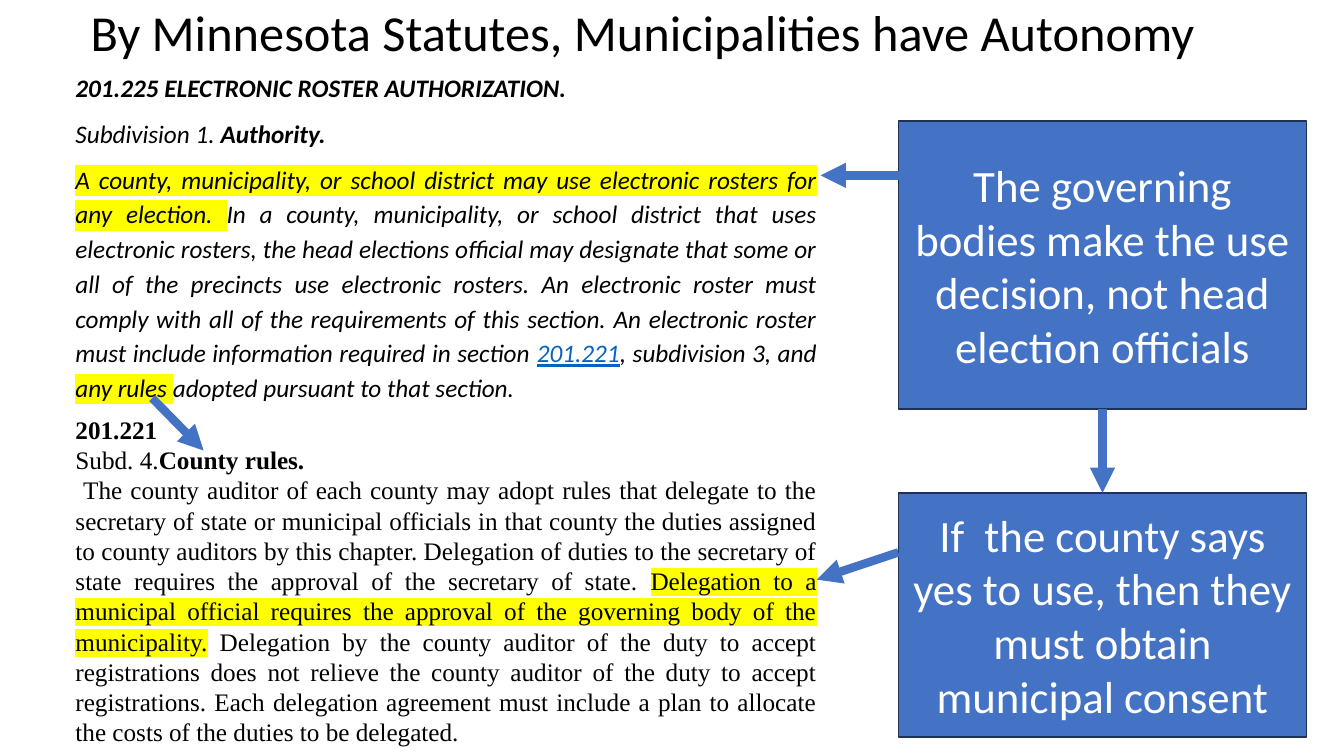
import pptx
import pptx.util
import pptx.dml.color
import pptx.enum.shapes
import pptx.enum.text
import pptx.oxml
import pptx.oxml.ns
import lxml.etree

Inches = pptx.util.Inches
Pt = pptx.util.Pt
Align = pptx.enum.text.PP_ALIGN
qn = pptx.oxml.ns.qn


def color(code):
    return pptx.dml.color.RGBColor.from_string(code)


def add_text(frame, paras, face, size, ink, align):
    frame.word_wrap = True
    for num, parts in enumerate(paras):
        para = frame.paragraphs[0] if num == 0 else frame.add_paragraph()
        para.alignment = align
        for words, marks in parts:
            run = para.add_run()
            run.text = words
            font = run.font
            font.name = face
            font.size = Pt(size)
            font.bold = "b" in marks
            font.italic = "i" in marks
            font.underline = "u" in marks
            font.color.rgb = color("0563C1" if "u" in marks else ink)
            if "h" in marks:
                glow = lxml.etree.Element(qn("a:highlight"))
                lxml.etree.SubElement(glow, qn("a:srgbClr")).set("val", "FFFF00")
                run._r.rPr.find(qn("a:solidFill")).addnext(glow)


deck = pptx.Presentation()
deck.slide_width = Inches(13.33)
deck.slide_height = Inches(7.5)
slide = deck.slides.add_slide(deck.slide_layouts[6])
shapes = slide.shapes

roster = [
    [("201.225 ELECTRONIC ROSTER AUTHORIZATION.", "bi")],
    [("Subdivision 1. ", "i"), ("Authority.", "bi")],
    [
        ("A county, municipality, or school district may use electronic rosters "
         "for any election. ", "ih"),
        ("In a county, municipality, or school district that uses electronic "
         "rosters, the head elections official may designate that some or all of "
         "the precincts use electronic rosters. An electronic roster must comply "
         "with all of the requirements of this section. An electronic roster must "
         "include information required in section ", "i"),
        ("201.221", "iu"),
        (", subdivision 3, and ", "i"),
        ("any rules ", "ih"),
        ("adopted pursuant to that section.", "i"),
    ],
]
rules = [
    [("201.221", "b")],
    [("Subd. 4.", ""), ("County rules.", "b")],
    [
        (" The county auditor of each county may adopt rules that delegate to the "
         "secretary of state or municipal officials in that county the duties "
         "assigned to county auditors by this chapter. Delegation of duties to the "
         "secretary of state requires the approval of the secretary of state. ", ""),
        ("Delegation to a municipal official requires the approval of the governing "
         "body of the municipality.", "h"),
        (" Delegation by the county auditor of the duty to accept registrations does "
         "not relieve the county auditor of the duty to accept registrations. Each "
         "delegation agreement must include a plan to allocate the costs of the "
         "duties to be delegated.", ""),
    ],
]
title = [[("By Minnesota Statutes, Municipalities have Autonomy", "")]]

frames = []
for left, top, width, height, paras, face, size, align in [
    (0.65, 0.62, 7.55, 3.44, roster, "Calibri", 18, Align.JUSTIFY),
    (0.65, 4.06, 7.55, 3.43, rules, "Times New Roman", 18, Align.JUSTIFY),
    (0.8, -0.04, 11.21, 0.71, title, "Calibri", 36, Align.LEFT),
]:
    box = shapes.add_textbox(Inches(left), Inches(top), Inches(width), Inches(height))
    add_text(box.text_frame, paras, face, size, "000000", align)
    frames.append(box.text_frame)

for para in frames[0].paragraphs:
    para.line_spacing = 1.15
    para.space_after = Pt(8)
frames[2].word_wrap = False

notes = []
for top, height, words in [
    (1.2, 2.86, "The governing bodies make the use decision, not head election officials"),
    (4.89, 2.42, "If  the county says yes to use, then they must obtain municipal consent"),
]:
    note = shapes.add_shape(pptx.enum.shapes.MSO_SHAPE.RECTANGLE,
                            Inches(8.91), Inches(top), Inches(4.05), Inches(height))
    note.shadow.inherit = False
    note.fill.solid()
    note.fill.fore_color.rgb = color("4472C4")
    note.line.color.rgb = color("1E3256")
    note.line.width = Pt(1)
    note.text_frame.vertical_anchor = pptx.enum.text.MSO_ANCHOR.MIDDLE
    add_text(note.text_frame, [[(words, "")]], "Calibri", 32, "FFFFFF", Align.CENTER)
    notes.append(note)

for x1, y1, x2, y2 in [
    (9.04, 1.74, 8.14, 1.74),
    (8.91, 5.48, 8.1, 5.75),
    (1.51, 3.95, 2.02, 4.47),
    (10.94, 4.06, 10.94, 4.89),
]:
    arrow = shapes.add_connector(pptx.enum.shapes.MSO_CONNECTOR.STRAIGHT,
                                 Inches(x1), Inches(y1), Inches(x2), Inches(y2))
    arrow.line.color.rgb = color("4472C4")
    arrow.line.width = Pt(6)
    tip = lxml.etree.SubElement(arrow.line._get_or_add_ln(), qn("a:tailEnd"))
    tip.set("type", "triangle")
    lxml.etree.SubElement(arrow._element.spPr, qn("a:effectLst"))

arrow.begin_connect(notes[0], 2)
arrow.end_connect(notes[1], 0)

deck.save("out.pptx")
